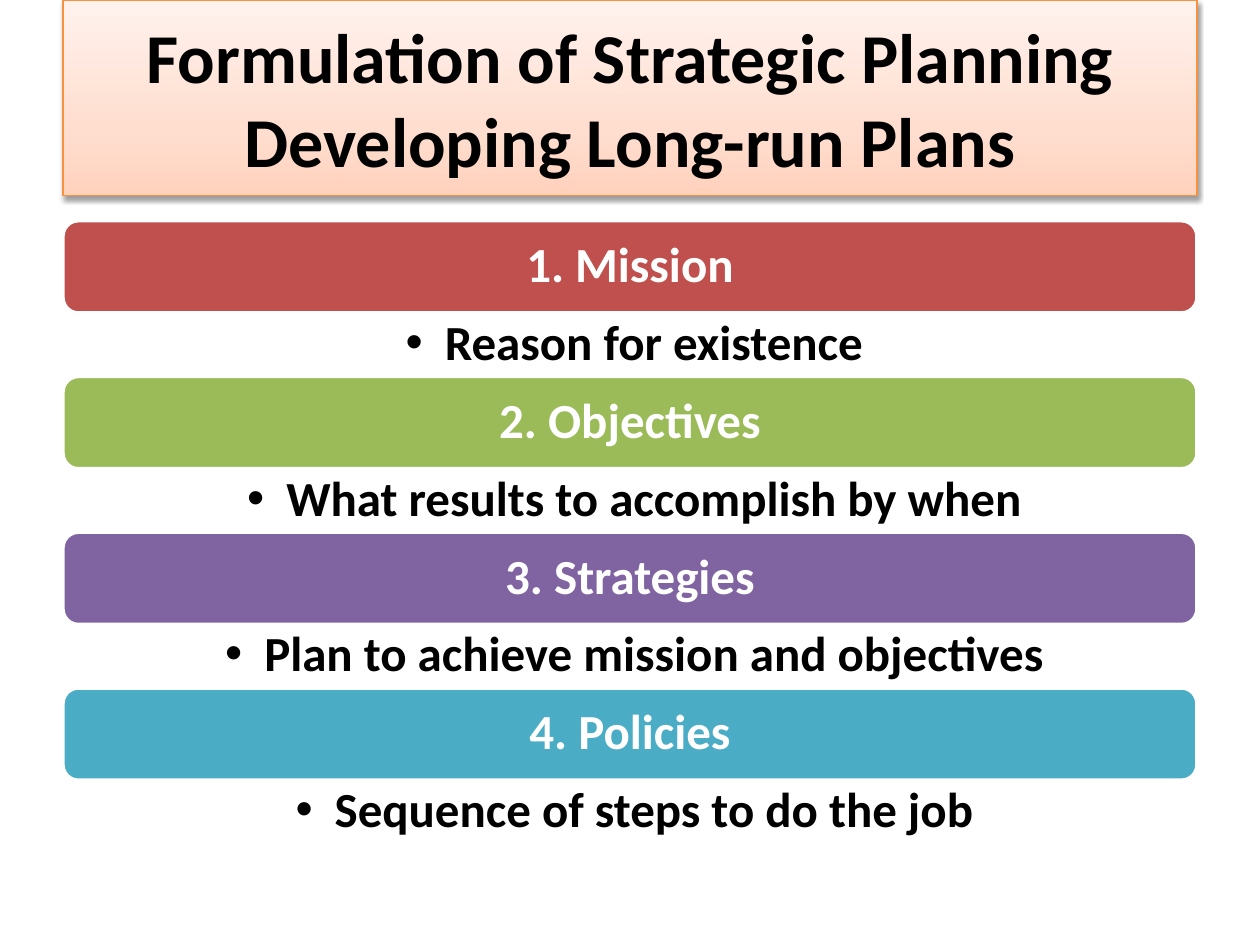
from copy import deepcopy

from lxml import etree
from pptx import Presentation
from pptx.dml.color import RGBColor
from pptx.enum.shapes import MSO_SHAPE
from pptx.enum.text import MSO_ANCHOR, MSO_AUTO_SIZE, PP_ALIGN
from pptx.oxml.ns import qn
from pptx.util import Cm, Pt

ROUNDED = MSO_SHAPE.ROUNDED_RECTANGLE
CENTER = PP_ALIGN.CENTER
MIDDLE, TOP = MSO_ANCHOR.MIDDLE, MSO_ANCHOR.TOP
NO_AUTOFIT = MSO_AUTO_SIZE.NONE

COLORS = {
    "black": "000000", "white": "FFFFFF", "title_line": "F69240",
    "peach": "FFD2BD", "peach_mid": "FFDED0", "peach_light": "FFF2ED",
    "red": "C0504D", "green": "9BBB59", "purple": "8064A2", "aqua": "4BACC6",
}
TITLE = "Formulation of Strategic Planning\nDeveloping Long-run Plans"
STEPS = [
    ("1. Mission", "Reason for existence", "red"),
    ("2. Objectives", "What results to accomplish by when", "green"),
    ("3. Strategies", "Plan to achieve mission and objectives", "purple"),
    ("4. Policies", "Sequence of steps to do the job", "aqua"),
]
BAR_HEIGHT, CAPTION_HEIGHT = Cm(1.86), Cm(1.28)


def rgb(name):
    return RGBColor.from_string(COLORS[name])


def write(sp, text, size=28, color="black", anchor=MIDDLE, spacing=None,
          margins=(0.25, 0.13, 0.25, 0.13), bullet=False):
    """Fill a shape with one centred bold paragraph; margins are in cm."""
    tf = sp.text_frame
    tf.word_wrap = True
    tf.auto_size = NO_AUTOFIT
    tf.vertical_anchor = anchor
    tf.margin_left, tf.margin_top, tf.margin_right, tf.margin_bottom = map(Cm, margins)
    p = tf.paragraphs[0]
    p.text = text
    p.alignment = CENTER
    p.line_spacing = spacing
    for r in p.runs:
        r.font.name = "Calibri"
        r.font.size = Pt(size)
        r.font.bold = True
        r.font.color.rgb = rgb(color)
    if bullet:
        p.level = 1
        pPr = p._p.get_or_add_pPr()
        pPr.set("marL", str(Cm(0.79)))
        pPr.set("indent", str(-Cm(0.79)))
        etree.SubElement(pPr, qn("a:buFont")).set("typeface", "Arial")
        etree.SubElement(pPr, qn("a:buChar")).set("char", "•")


def fill_gradient(sp, stops, angle):
    sp.fill.gradient()
    sp.fill.gradient_angle = angle
    gs_list = sp._element.spPr.find(".//" + qn("a:gsLst"))
    while len(gs_list) < len(stops):
        gs_list.append(deepcopy(gs_list[0]))
    for stop, (position, color) in zip(sp.fill.gradient_stops, stops):
        stop.position = position
        stop.color.rgb = rgb(color)


def add_shadow(sp):
    sp.shadow.inherit = False
    effects = sp._element.spPr.find(qn("a:effectLst"))
    shadow = etree.SubElement(effects, qn("a:outerShdw"), blurRad=str(Pt(3.1)),
                              dist=str(Pt(1.6)), dir="5400000", rotWithShape="0")
    color = etree.SubElement(shadow, qn("a:srgbClr"), val=COLORS["black"])
    etree.SubElement(color, qn("a:alpha"), val="38000")


def place_title(slide, left, top, width, height):
    sp = slide.shapes.title
    sp.left, sp.top, sp.width, sp.height = left, top, width, height
    fill_gradient(sp, [(0, "peach"), (0.35, "peach_mid"), (1, "peach_light")], 90)
    sp.line.color.rgb = rgb("title_line")
    sp.line.width = Pt(0.75)
    add_shadow(sp)
    write(sp, TITLE, size=40)


def add_step(slide, left, top, width, heading, caption, color):
    """Add a coloured heading bar with its bulleted caption below."""
    bar = slide.shapes.add_shape(ROUNDED, left, top, width, BAR_HEIGHT)
    bar.shadow.inherit = False
    bar.fill.solid()
    bar.fill.fore_color.rgb = rgb(color)
    bar.line.color.rgb = rgb("white")
    bar.line.width = Pt(2)
    write(bar, heading, color="white", spacing=0.9, margins=(0.3, 0.3, 0.3, 0.3))

    box = slide.shapes.add_textbox(left, top + BAR_HEIGHT, width, CAPTION_HEIGHT)
    write(box, caption, anchor=TOP, spacing=0.9,
          margins=(0.73, 0.1, 0.56, 0.1), bullet=True)


def add_steps(slide, left, top, width):
    for i, step in enumerate(STEPS):
        add_step(slide, left, top + i * (BAR_HEIGHT + CAPTION_HEIGHT), width, *step)


def main():
    prs = Presentation()
    prs.slide_width, prs.slide_height = Cm(25.4), Cm(19.05)
    slide = prs.slides.add_slide(prs.slide_layouts[5])
    left, width = Cm(1.27), Cm(22.86)
    place_title(slide, left, Cm(0), width, Cm(3.94))
    add_steps(slide, left, Cm(4.45), width)
    prs.save("out.pptx")


if __name__ == "__main__":
    main()
